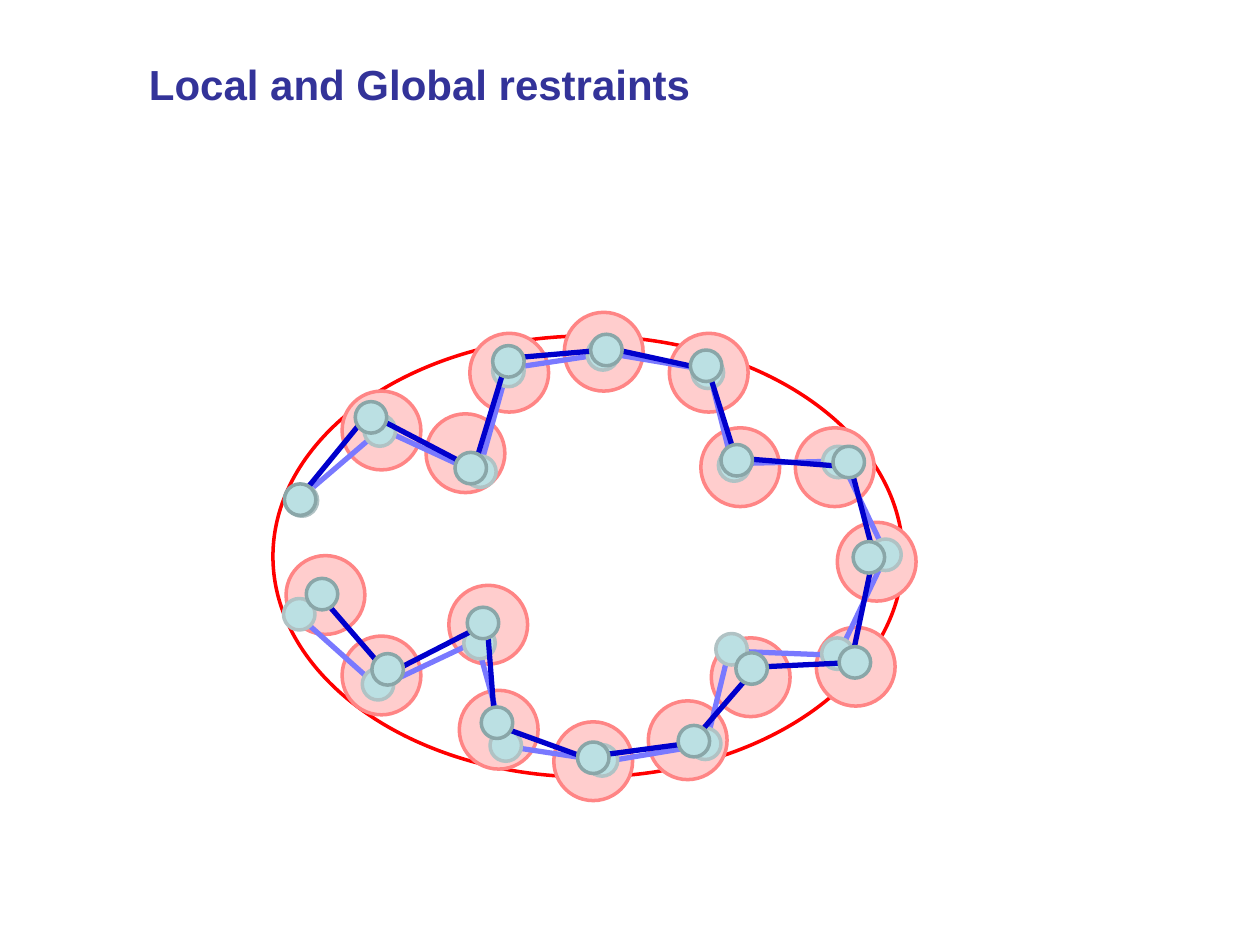
from pptx import Presentation
from pptx.dml.color import RGBColor
from pptx.enum.shapes import MSO_CONNECTOR as Conn, MSO_SHAPE as Kind
from pptx.enum.text import MSO_AUTO_SIZE as Fit
from pptx.oxml.ns import qn
from pptx.util import Pt
from lxml.etree import SubElement as Sub

hue = RGBColor.from_string


def oval(x, y, w, h, line, fill=None):
    """Ellipse centred on x, y."""
    s = slide.shapes.add_shape(Kind.OVAL, Pt(x - w / 2), Pt(y - h / 2), Pt(w), Pt(h))
    s.shadow.inherit = False
    if fill:
        s.fill.solid()
        s.fill.fore_color.rgb = hue(fill)
    else:
        s.fill.background()
    s.line.color.rgb = hue(line)
    s.line.width = Pt(2)


def bond(x1, y1, x2, y2, color):
    c = slide.shapes.add_connector(Conn.STRAIGHT, Pt(x1), Pt(y1), Pt(x2), Pt(y2))
    c.line.color.rgb = hue(color)
    c.line.width = Pt(3)
    Sub(c._element.spPr, qn("a:effectLst"))


deck = Presentation()
deck.slide_width, deck.slide_height = Pt(720), Pt(540)
slide = deck.slides.add_slide(deck.slide_layouts[6])

# Global restraint
oval(336, 318, 360, 252, "FF0000")

# Title
box = slide.shapes.add_textbox(Pt(78), Pt(30), Pt(372), Pt(36))
frame = box.text_frame
frame.word_wrap = True
frame.auto_size = Fit.SHAPE_TO_FIT_TEXT
run = frame.paragraphs[0].add_run()
run.text = "Local and Global restraints"
for key, val in {"name": "Arial", "size": Pt(24), "bold": True}.items():
    setattr(run.font, key, val)
run.font.color.rgb = hue("333399")

# Local restraints: halo centres
halos = [
    (186, 340), (279, 357), (218, 386), (285, 417),
    (393, 423), (339, 435), (429, 387), (489, 381),
    (501, 321), (477, 267), (423, 267), (405, 213),
    (345, 201), (291, 213), (266, 259), (218, 246),
]
for x, y in halos:
    oval(x, y, 45, 45, "FF8585", "FFCDCD")

# Chains: each bead is its centre, then the two ends of its bond
pale = [
    # lower half
    ((171, 351), (168.5, 350, 216, 392.5)),
    ((216, 391), (214, 394, 272, 366.5)),
    ((274, 367.5), (272, 365, 289, 426)),
    ((289, 426), (286.5, 426, 349, 435.5)),
    ((344, 434.5), (341, 436, 404, 425.5)),
    ((403, 425), (403, 427.5, 418, 366)),
    ((418, 371), (415.5, 372, 479, 374.5)),
    ((478.5, 373.5), (478, 376.5, 505.5, 319)),
    # upper half
    ((172.5, 286), (169, 287, 217.5, 245.5)),
    ((217, 246), (215.5, 244, 273, 270.5)),
    ((274.5, 269.5), (273, 272, 290, 211)),
    ((290.5, 212), (287.5, 211, 350.5, 201.5)),
    ((344.5, 202.5), (342, 201, 404.5, 211.5)),
    ((404.5, 213), (404.5, 209.5, 420, 271.5)),
    ((419.5, 266), (416, 265, 480, 263.5)),
    ((479, 264), (479.5, 260.5, 507, 318)),
    ((506, 317), None),
]
dark = [
    ((171.5, 285.5), (169, 287, 209.5, 237.5)),
    ((212, 238.5), (210, 236, 266.5, 265.5)),
    ((269, 267.5), (270, 270, 288.5, 209.5)),
    ((290.5, 206.5), (288, 205, 351.5, 199.5)),
    ((346.5, 200), (343.5, 198, 405.5, 211.5)),
    ((403.5, 209), (403, 206, 422, 266.5)),
    ((421, 263), (417.5, 261.5, 481, 266.5)),
    ((485, 264), (484.5, 260.5, 501, 323.5)),
    ((496.5, 318.5), (499.5, 316, 486.5, 378)),
    ((488.5, 378.5), (489.5, 378.5, 426, 381.5)),
    ((429.5, 382), (432.5, 381, 391, 429)),
    ((396.5, 423.5), (399.5, 424, 336, 432.5)),
    ((339, 433), (341.5, 435.5, 281, 413.5)),
    ((284, 413), (283, 416, 278, 352)),
    ((276, 356), (279.5, 355.5, 222, 385)),
    ((221.5, 382.5), (222.5, 386, 180.5, 337.5)),
    ((184, 339.5), None),
]
for chain, link, rim in [(pale, "7979FF", "B0C2C4"), (dark, "0000CC", "8AA6A8")]:
    for (x, y), ends in chain:
        if ends:
            bond(*ends, link)
        oval(x, y, 18, 18, rim, "BBE0E3")

deck.save("out.pptx")
